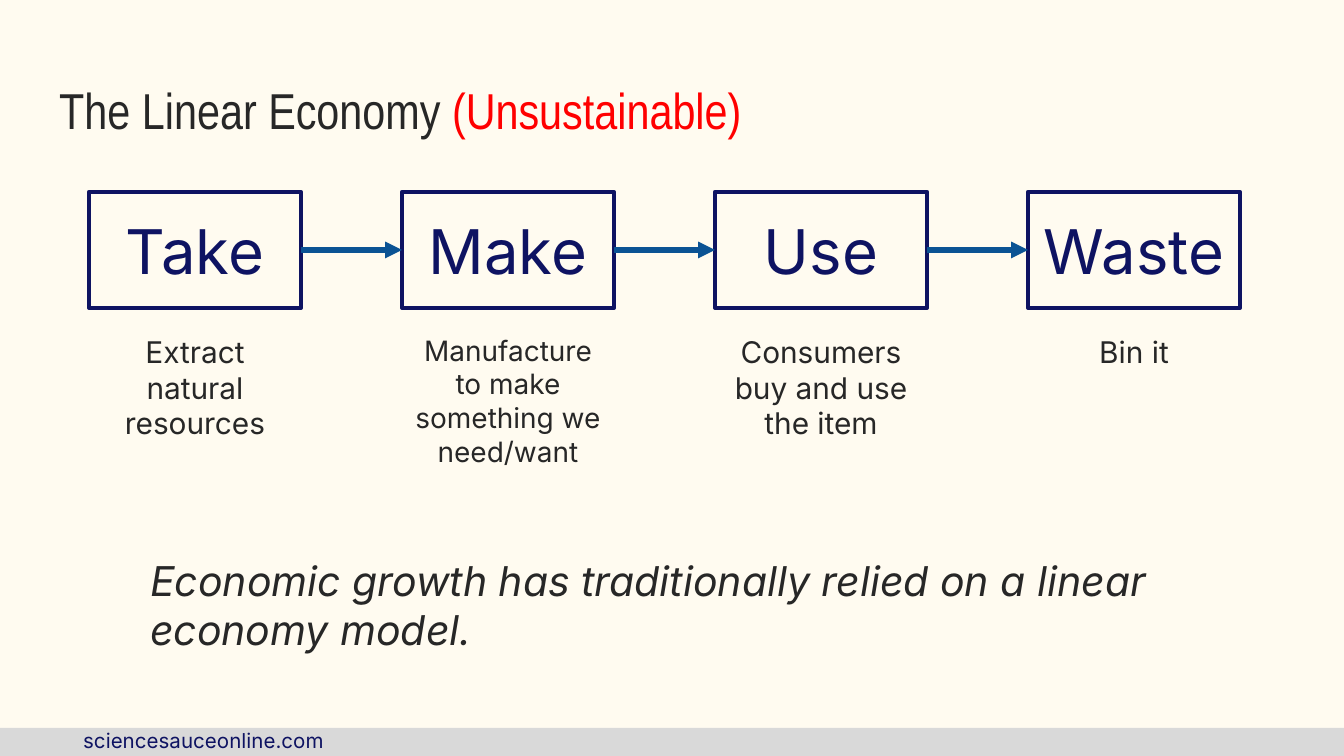
from lxml import etree
from pptx import Presentation, util as u
from pptx.dml.color import RGBColor
from pptx.enum import shapes, text
from pptx.oxml.ns import qn

PX = 9144000 / 1344
CREAM = RGBColor(0xFF, 0xFB, 0xF0)
GREY = RGBColor(0xD9, 0xD9, 0xD9)
NAVY = RGBColor(0x0E, 0x13, 0x62)
BLUE = RGBColor(0x0B, 0x53, 0x94)
DARK = RGBColor(0x27, 0x27, 0x27)
RED = RGBColor(0xFF, 0x00, 0x00)
LEFT, STEP, WIDTH, HEIGHT = 89, 313, 212, 116
STAGES = [
    ("Take", "Extract natural resources", 16),
    ("Make", "Manufacture to make something we need/want", 15),
    ("Use", "Consumers buy and use the item", 16),
    ("Waste", "Bin it", 16),
]


def px(*nums):
    """Turn pixel lengths into EMU."""
    return [u.Emu(round(n * PX)) for n in nums]


def write(shape, words, size, color, face="Inter", center=False):
    """Fill a shape with one styled paragraph and return it."""
    frame = shape.text_frame
    frame.word_wrap = True
    frame.margin_left = frame.margin_right = u.Inches(0.1)
    frame.margin_top = frame.margin_bottom = u.Inches(0.1)
    para = frame.paragraphs[0]
    para.alignment = text.PP_ALIGN.CENTER if center else text.PP_ALIGN.LEFT
    para.font.size = u.Pt(size)
    para.font.name = face
    para.font.color.rgb = color
    para.add_run().text = words
    return para


def label(slide, area, words, size, color, **style):
    """Add a text box and return its paragraph."""
    return write(slide.shapes.add_textbox(*px(*area)), words, size, color, **style)


def rect(slide, area):
    """Add a plain rectangle without a shadow."""
    shape = slide.shapes.add_shape(shapes.MSO_SHAPE.RECTANGLE, *px(*area))
    shape.shadow.inherit = False
    return shape


def stage(slide, left, word):
    """Add an outlined box for one stage."""
    box = rect(slide, (left, 192, WIDTH, HEIGHT))
    box.fill.background()
    box.line.color.rgb = NAVY
    box.line.width = u.Pt(2.25)
    write(box, word, 33, NAVY, center=True)
    box.text_frame.vertical_anchor = text.MSO_ANCHOR.MIDDLE
    return box


def arrow(slide, start, end):
    """Join two stages with an arrow."""
    line = slide.shapes.add_connector(shapes.MSO_CONNECTOR.STRAIGHT, 0, 0, 0, 0)
    line.begin_connect(start, 3)
    line.end_connect(end, 1)
    line.line.color.rgb = BLUE
    line.line.width = u.Pt(3)
    etree.SubElement(line.line._get_or_add_ln(), qn("a:tailEnd"), type="triangle")
    etree.SubElement(line._element.spPr, qn("a:effectLst"))


def footer(slide):
    """Add the grey bar and the site address."""
    bar = rect(slide, (0, 728, 1344, 28))
    bar.fill.solid()
    bar.fill.fore_color.rgb = GREY
    bar.line.fill.background()
    label(slide, (70, 716, 449, 24), "sciencesauceonline.com", 11, NAVY)


def main():
    """Build and save the slide."""
    deck = Presentation()
    deck.slide_width, deck.slide_height = px(1344, 756)
    slide = deck.slides.add_slide(deck.slide_layouts[6])
    slide.background.fill.solid()
    slide.background.fill.fore_color.rgb = CREAM
    footer(slide)

    title = label(slide, (46, 66, 1252, 90), "The Linear Economy ", 27, DARK,
                  face="Arial Narrow")
    note = title.add_run()
    note.text = "(Unsustainable)"
    note.font.color.rgb = RED

    boxes = []
    for i, (word, caption, size) in enumerate(STAGES):
        left = LEFT + i * STEP
        boxes.append(stage(slide, left, word))
        label(slide, (left, 320, WIDTH, HEIGHT), caption, size, DARK, center=True)
    for start, end in zip(boxes, boxes[1:]):
        arrow(slide, start, end)

    claim = label(slide, (137, 542, 1072, 122),
                  "Economic growth has traditionally relied on a linear economy model.",
                  22, DARK)
    claim.font.italic = True
    deck.save("out.pptx")


if __name__ == "__main__":
    main()
